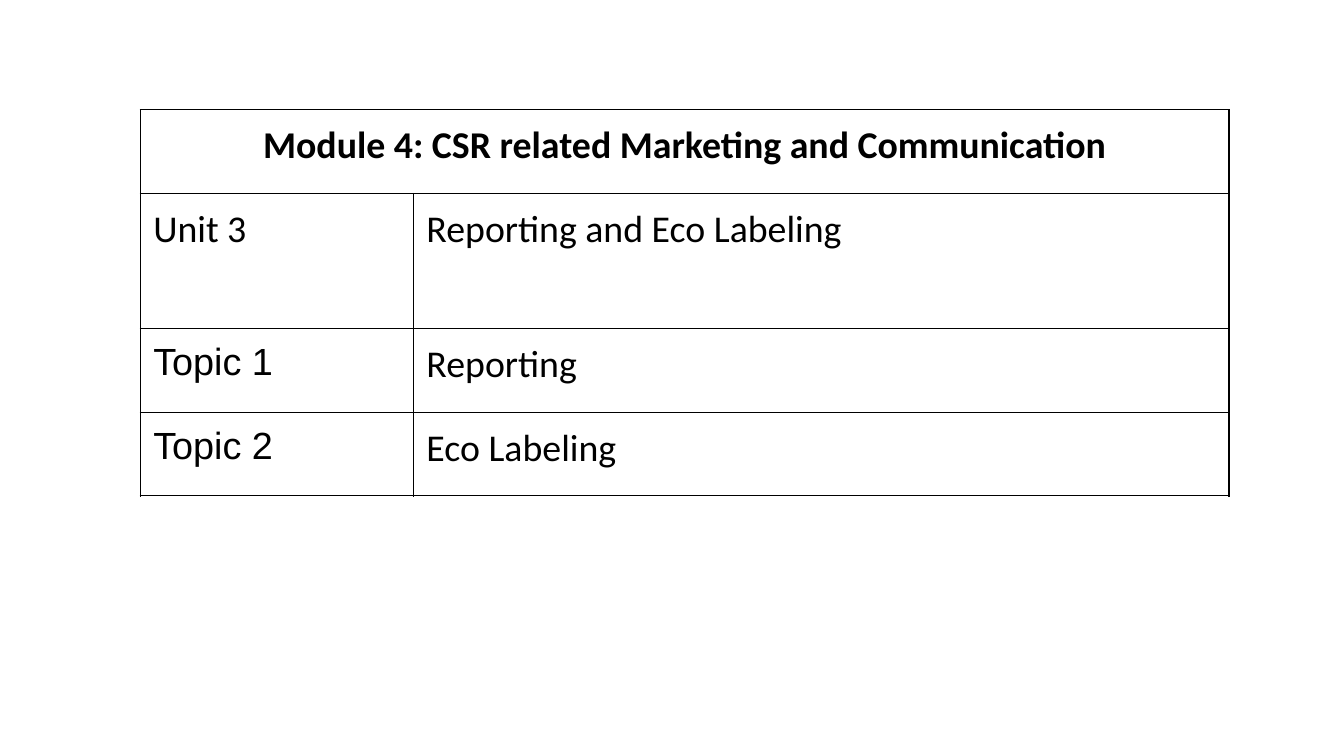
import pptx
import pptx.util
import pptx.dml.color
import pptx.enum.text
import lxml.etree
from pptx.oxml.ns import qn

Inches = pptx.util.Inches
COLORS = {"ink": "000000", "paper": "FFFFFF"}
COLUMN_WIDTHS = [2.71, 8.09]
ROW_HEIGHTS = [0.83, 1.34, 0.83, 0.83]
ROWS = [
    [("Module 4: CSR related Marketing and Communication", "Calibri")],
    [("Unit 3", "Calibri"), ("Reporting and Eco Labeling", "Calibri")],
    [("Topic 1", "Arial"), ("Reporting", "Calibri")],
    [("Topic 2", "Arial"), ("Eco Labeling", "Calibri")],
]


def add_borders(cell):
    properties = cell._tc.get_or_add_tcPr()
    for position, side in enumerate(["a:lnL", "a:lnR", "a:lnT", "a:lnB"]):
        line = lxml.etree.Element(qn(side), w=str(pptx.util.Pt(1)))
        fill = lxml.etree.SubElement(line, qn("a:solidFill"))
        lxml.etree.SubElement(fill, qn("a:srgbClr"), val=COLORS["ink"])
        properties.insert(position, line)


deck = pptx.Presentation()
deck.slide_width = Inches(13.33)
deck.slide_height = Inches(7.5)
page = deck.slides.add_slide(deck.slide_layouts[6])

frame = page.shapes.add_table(
    len(ROWS), len(COLUMN_WIDTHS), Inches(1.39), Inches(1.09),
    Inches(sum(COLUMN_WIDTHS)), Inches(sum(ROW_HEIGHTS)))
table = frame.table
table.first_row = False
table.horz_banding = False
for column, width in zip(table.columns, COLUMN_WIDTHS):
    column.width = Inches(width)
for row, height in zip(table.rows, ROW_HEIGHTS):
    row.height = Inches(height)
table.cell(0, 0).merge(table.cell(0, 1))

for cell in table.iter_cells():
    cell.fill.solid()
    cell.fill.fore_color.rgb = pptx.dml.color.RGBColor.from_string(COLORS["paper"])
    for side in ["left", "right", "top", "bottom"]:
        setattr(cell, f"margin_{side}", Inches(0.13))
    add_borders(cell)

for row_index, entries in enumerate(ROWS):
    for column_index, (words, font_name) in enumerate(entries):
        para = table.cell(row_index, column_index).text_frame.paragraphs[0]
        if row_index == 0:
            para.alignment = pptx.enum.text.PP_ALIGN.CENTER
        span = para.add_run()
        span.text = words
        format_values = {"name": font_name, "size": pptx.util.Pt(27), "bold": row_index == 0}
        for attribute, value in format_values.items():
            setattr(span.font, attribute, value)
        span.font.color.rgb = pptx.dml.color.RGBColor.from_string(COLORS["ink"])

deck.save("out.pptx")
